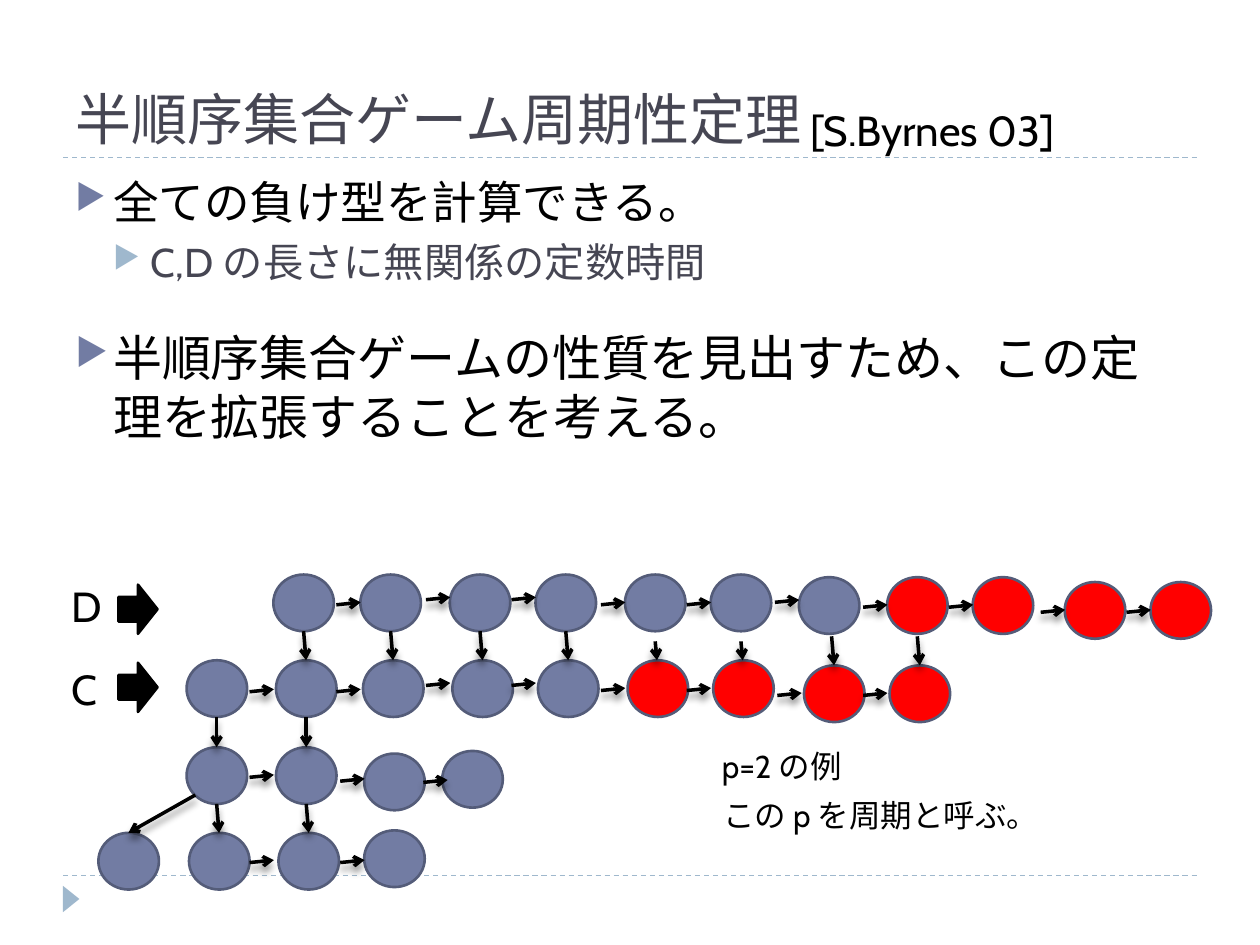
from lxml import etree
from pptx import Presentation
from pptx.dml.color import RGBColor
from pptx.enum.dml import MSO_LINE
from pptx.enum.shapes import MSO_CONNECTOR, MSO_SHAPE
from pptx.enum.text import MSO_ANCHOR, MSO_AUTO_SIZE
from pptx.oxml import parse_xml
from pptx.oxml.ns import nsdecls, qn
from pptx.util import Pt

STRAIGHT = MSO_CONNECTOR.STRAIGHT
OVAL, ARROW, WEDGE = MSO_SHAPE.OVAL, MSO_SHAPE.RIGHT_ARROW, MSO_SHAPE.ISOSCELES_TRIANGLE
DASH = MSO_LINE.DASH
TOP, BOTTOM = MSO_ANCHOR.TOP, MSO_ANCHOR.BOTTOM
GROW, FIXED = MSO_AUTO_SIZE.SHAPE_TO_FIT_TEXT, MSO_AUTO_SIZE.NONE
BLUE, RIM, SKY, RED, BLACK, GREY = "727CA3", "545C79", "9FB8CD", "FF0000", "000000", "464653"
SHADE = (
    '<a:outerShdw blurRad="50800" dist="43180" dir="5400000" rotWithShape="0">'
    '<a:srgbClr val="000000"><a:alpha val="40000"/></a:srgbClr></a:outerShdw>'
)


def hue(code):
    return RGBColor.from_string(code)


def link(x, y, to_x, to_y, tone, width, shade=""):
    line = shapes.add_connector(STRAIGHT, Pt(x), Pt(y), Pt(to_x), Pt(to_y))
    line.line.color.rgb = hue(tone)
    line.line.width = Pt(width)
    props = line._element.spPr
    props.append(parse_xml(f'<a:effectLst {nsdecls("a")}>{shade}</a:effectLst>'))
    return line


deck = Presentation()
deck.slide_width, deck.slide_height = Pt(720), Pt(540)
slide = deck.slides.add_slide(deck.slide_layouts[6])
shapes = slide.shapes

for y in (500.4, 90):
    rule = link(36, y, 684, y, SKY, 0.75)
    rule.line.dash_style = DASH

mark = shapes.add_shape(WEDGE, Pt(33.1), Pt(509), Pt(15.1), Pt(9.4))
mark.rotation = 90
mark.shadow.inherit = False
mark.fill.solid()
mark.fill.fore_color.rgb = hue(SKY)
mark.line.fill.background()

body = shapes.add_textbox(Pt(36), Pt(95.8), Pt(648), Pt(388.8))
frame = body.text_frame
frame.word_wrap = True
points = [
    ("全ての負け型を計算できる。", 0, 26, BLACK, BLUE, 6),
    ("C,D の長さに無関係の定数時間", 1, 23, GREY, SKY, 5),
    ("半順序集合ゲームの性質を見出すため、この定理を拡張することを考える。", 0, 28, BLACK, BLUE, 24),
]
frame.text = "\n".join(point[0] for point in points)
for para, (text, level, size, tone, dot, gap) in zip(frame.paragraphs, points):
    para.level = level
    para.space_before = Pt(gap)
    font = para.runs[0].font
    font.name, font.size = "Cabin", Pt(size)
    font.color.rgb = hue(tone)
    props = para._p.get_or_add_pPr()
    props.set("marL", str(Pt(21.6 * (level + 1))))
    props.set("indent", str(Pt(-21.6)))
    tint = etree.SubElement(props, qn("a:buClr"))
    etree.SubElement(tint, qn("a:srgbClr"), val=dot)
    etree.SubElement(props, qn("a:buSzPct"), val="76000")
    etree.SubElement(props, qn("a:buChar"), char="▶")

labels = [
    ("半順序集合ゲーム周期性定理", 36, 12.2, 648, 77.8, 32, "Roboto Slab", GREY, BOTTOM, FIXED),
    ("[S.Byrnes 03]", 455.8, 56.2, 163.4, 36, 24, "Cabin", BLACK, TOP, GROW),
    ("C", 33.8, 375.8, 39.6, 36, 24, "Cabin", BLACK, TOP, GROW),
    ("D", 33.8, 328.3, 39.6, 36, 24, "Cabin", BLACK, TOP, GROW),
    ("p=2 の例", 405.4, 423.4, 90, 28.8, 18, "Cabin", BLACK, TOP, GROW),
    ("この p を周期と呼ぶ。", 406.1, 451.4, 198, 28.8, 18, "Cabin", BLACK, TOP, GROW),
]
for text, x, y, wide, high, size, face, tone, anchor, fit in labels:
    box = shapes.add_textbox(Pt(x), Pt(y), Pt(wide), Pt(high))
    frame = box.text_frame
    frame.text = text
    frame.word_wrap = True
    frame.auto_size = fit
    frame.vertical_anchor = anchor
    font = frame.paragraphs[0].runs[0].font
    font.name, font.size = face, Pt(size)
    font.color.rgb = hue(tone)

nodes = [
    (328.3, BLUE, (156.2, 205.9, 257, 306, 357.1, 406.1)),
    (329.8, BLUE, (456.5,)),
    (329.8, RED, (506.9, 555.8)),
    (332.6, RED, (608.4, 657.4)),
    (377.3, BLUE, (106.6, 157.7, 207.4, 258.5, 307.4)),
    (377.3, RED, (358.6, 407.5)),
    (380.2, RED, (459.4, 508.3)),
    (427, BLUE, (106.6, 157.7)),
    (430.6, BLUE, (208.1,)),
    (429.1, BLUE, (252.7,)),
    (475.9, BLUE, (56.2, 108, 159.1)),
    (474.5, BLUE, (208.1,)),
]
solids = [(OVAL, x, y, 34.6, 32.4, tone, RIM) for y, tone, row in nodes for x in row]
solids += [(ARROW, 67.7, y, 22.3, 28.1, BLACK, BLACK) for y in (334.1, 378.7)]
for kind, x, y, wide, high, tone, edge in solids:
    solid = shapes.add_shape(kind, Pt(x), Pt(y), Pt(wide), Pt(high))
    solid.shadow.inherit = False
    solid.fill.solid()
    solid.fill.fore_color.rgb = hue(tone)
    solid.line.color.rgb = hue(edge)
    solid.line.width = Pt(1.5)

steps = [
    (13.9, -1.4, 345.6, (192.2, 343.4, 392.4)),
    (13.9, -1.4, 342.7, (243.4, 292.3)),
    (13.9, -1.4, 344.2, (442.8,)),
    (13.9, -1.4, 347, (493.2, 542.2)),
    (13.9, -1.4, 349.9, (594.7, 643.7)),
    (13.9, -1.4, 395.3, (142.6, 192.2)),
    (13.9, -1.4, 391.7, (243.4, 292.3)),
    (13.9, -1.4, 394.6, (343.4, 392.4)),
    (13.9, -1.4, 397.4, (444.2, 493.2)),
    (13.9, -1.4, 444.2, (142.6,)),
    (13.9, -1.4, 446.4, (194.4,)),
    (13.9, -1.4, 447.1, (241.9,)),
    (13.9, -1.4, 492.9, (142.6, 194.4)),
    (1.4, 16.6, 360.7, (173.5, 223.2, 274.3, 323.3)),
    (1.4, 16.6, 363.6, (475.2, 524.2)),
    (1, 10.8, 366.5, (374.4, 423.4)),
    (0, 17.3, 409.7, (123.8, 175)),
    (1.4, 16.6, 459.4, (123.8, 175)),
    (-38.2, 21.6, 454.3, (111.6,)),
]
for across, down, y, row in steps:
    for x in row:
        arrow = link(x, y, x + across, y + down, BLACK, 2, SHADE)
        etree.SubElement(arrow.line._get_or_add_ln(), qn("a:tailEnd"), type="arrow")

deck.save("out.pptx")
